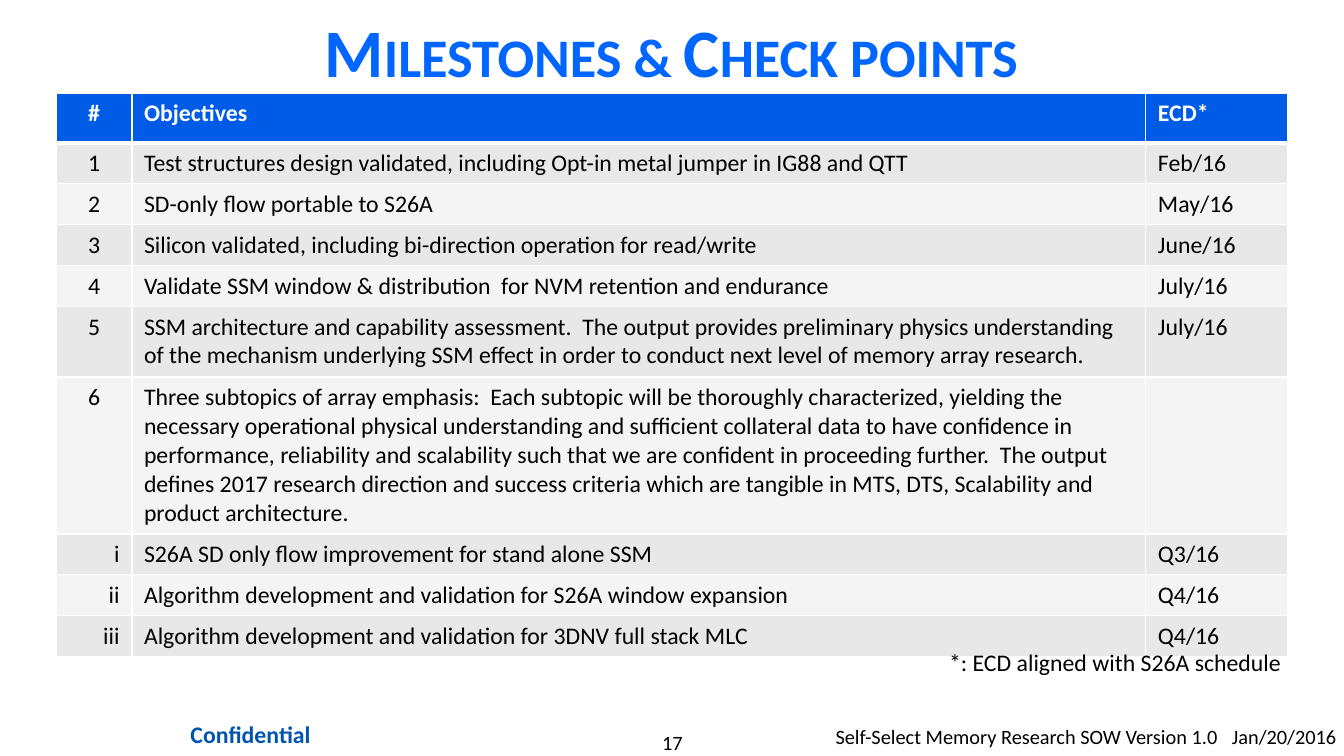
from lxml.etree import SubElement
from pptx import Presentation
from pptx.dml.color import RGBColor
from pptx.enum.text import MSO_ANCHOR, MSO_AUTO_SIZE, PP_ALIGN
from pptx.oxml.ns import qn
from pptx.util import Cm, Pt

LEFT, CENTER, RIGHT = PP_ALIGN.LEFT, PP_ALIGN.CENTER, PP_ALIGN.RIGHT
LINE_ROW, TWO_LINE_ROW, FIVE_LINE_ROW = 0.85, 1.47, 3.26
COLUMN_WIDTHS = (1.57, 21.08, 2.95)
HEADER = ("#", "Objectives", "ECD*")
MILESTONES = [
    ("1", "Test structures design validated, including Opt-in metal jumper in IG88 and QTT", "Feb/16", LINE_ROW),
    ("2", "SD-only flow portable to S26A", "May/16", LINE_ROW),
    ("3", "Silicon validated, including bi-direction operation for read/write", "June/16", LINE_ROW),
    ("4", "Validate SSM window & distribution  for NVM retention and endurance", "July/16", LINE_ROW),
    ("5", "SSM architecture and capability assessment.  The output provides preliminary physics "
          "understanding of the mechanism underlying SSM effect in order to conduct next level of "
          "memory array research.", "July/16", TWO_LINE_ROW),
    ("6", "Three subtopics of array emphasis:  Each subtopic will be thoroughly characterized, "
          "yielding the necessary operational physical understanding and sufficient collateral data "
          "to have confidence in performance, reliability and scalability such that we are confident "
          "in proceeding further.  The output defines 2017 research direction and success criteria "
          "which are tangible in MTS, DTS, Scalability and product architecture.", "", FIVE_LINE_ROW),
    ("i", "S26A SD only flow improvement for stand alone SSM", "Q3/16", LINE_ROW),
    ("ii", "Algorithm development and validation for S26A window expansion", "Q4/16", LINE_ROW),
    ("iii", "Algorithm development and validation for 3DNV full stack MLC", "Q4/16", LINE_ROW),
]


def color(hex_string):
    """Turn a hex string into a colour."""
    return RGBColor.from_string(hex_string)


def write(frame, text, size=14, ink="000000", bold=False, align=LEFT):
    """Put one formatted paragraph into a text frame."""
    paragraph = frame.paragraphs[0]
    paragraph.alignment = align
    run = paragraph.add_run()
    run.text = text
    for name, value in {"name": "Calibri", "size": Pt(size), "bold": bold}.items():
        setattr(run.font, name, value)
    run.font.color.rgb = color(ink)
    return run


def add_label(slide, box, text, margins=(0.25, 0.13), wrap=True, tab=None, **style):
    """Add a text box with one line of text."""
    frame = slide.shapes.add_textbox(*map(Cm, box)).text_frame
    side, end = map(Cm, margins)
    layout = {"margin_left": side, "margin_right": side, "margin_top": end,
              "margin_bottom": end, "word_wrap": wrap}
    for name, value in layout.items():
        setattr(frame, name, value)
    if tab:
        stops = SubElement(frame.paragraphs[0]._p.get_or_add_pPr(), qn("a:tabLst"))
        SubElement(stops, qn("a:tab"), pos=str(Cm(tab)), algn="l")
    write(frame, text, **style)


def add_title(slide, box, text):
    """Move the title placeholder into the box and write it in small capitals."""
    title = slide.shapes.title
    for name, value in zip(("left", "top", "width", "height"), box):
        setattr(title, name, Cm(value))
    frame = title.text_frame
    layout = {"vertical_anchor": MSO_ANCHOR.MIDDLE, "auto_size": MSO_AUTO_SIZE.NONE, "word_wrap": True}
    for name, value in layout.items():
        setattr(frame, name, value)
    run = write(frame, text, size=40, ink="0066FF", bold=True, align=CENTER)
    run._r.get_or_add_rPr().set("cap", "small")


def format_cell(cell, fill, borders):
    """Give a cell white borders of the given widths and a solid fill."""
    properties = cell._tc.get_or_add_tcPr()
    for side, width in borders.items():
        line = SubElement(properties, qn(f"a:ln{side}"), w=str(Pt(width)))
        SubElement(SubElement(line, qn("a:solidFill")), qn("a:srgbClr"), val="FFFFFF")
    cell.fill.solid()
    cell.fill.fore_color.rgb = color(fill)


def add_milestones(slide, left, top):
    """Add the table of objectives with its top left corner at the given point."""
    rows = [(*HEADER, 1.04), *MILESTONES]
    size = sum(COLUMN_WIDTHS), sum(row[-1] for row in rows)
    table = slide.shapes.add_table(len(rows), len(HEADER), *map(Cm, (left, top, *size))).table
    for column, width in zip(table.columns, COLUMN_WIDTHS):
        column.width = Cm(width)
    for index, (*texts, height) in enumerate(rows):
        table.rows[index].height = Cm(height)
        heading = index == 0
        fill = "005CE7" if heading else ("F4F4F4", "E8E8E8")[index % 2]
        borders = {"L": 1, "R": 1, "T": 3 if index == 1 else 1, "B": 3 if heading else 1}
        number_align = CENTER if heading or texts[0].isdigit() else RIGHT
        for cell, text, align in zip(table.rows[index].cells, texts, (number_align, LEFT, LEFT)):
            format_cell(cell, fill, borders)
            if text:
                write(cell.text_frame, text, ink="FFFFFF" if heading else "000000",
                      bold=heading, align=align)


def add_footer(slide, top):
    """Add the confidentiality mark, the document version and the page number."""
    add_label(slide, (3.23, top, 3.96, 0.86), "Confidential", ink="0054B0", bold=True, align=CENTER)
    add_label(slide, (17.37, top + 0.1, 10.57, 0.76), "Self-Select Memory Research SOW Version 1.0\tJan/20/2016",
              margins=(0, 0.13), tab=8.24, size=12)
    add_label(slide, (11.53, top + 0.36, 4.9, 0.51), "17", margins=(0, 0), size=12, align=CENTER)


def main():
    """Build the milestones slide."""
    deck = Presentation()
    deck.slide_width, deck.slide_height = Cm(27.94), Cm(15.72)
    slide = deck.slides.add_slide(deck.slide_layouts[5])
    add_footer(slide, 14.83)
    add_title(slide, (2.08, 0.36, 23.75, 1.37), "Milestones & Check points")
    add_milestones(slide, 1.17, 1.93)
    add_label(slide, (19.48, 13.34, 7.49, 0.86), "*: ECD aligned with S26A schedule", wrap=False)
    deck.save("out.pptx")


if __name__ == "__main__":
    main()
